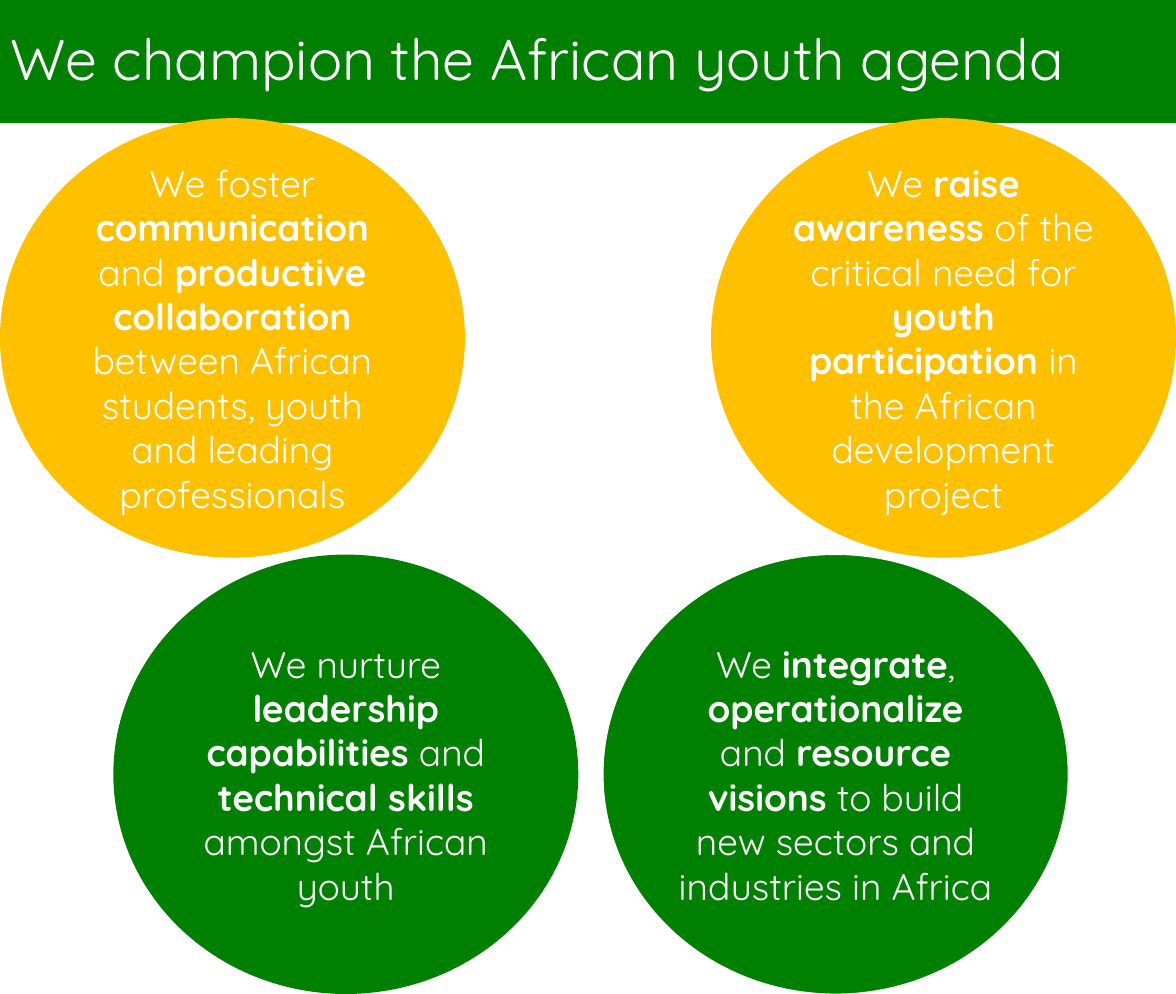
import pptx
import pptx.dml.color
import pptx.enum.shapes
import pptx.enum.text
import pptx.util

Inches, Pt = pptx.util.Inches, pptx.util.Pt
RGB = pptx.dml.color.RGBColor.from_string
SHAPE = pptx.enum.shapes.MSO_SHAPE
ALIGN = pptx.enum.text.PP_ALIGN
ANCHOR = pptx.enum.text.MSO_ANCHOR

TITLE = "We champion the African youth agenda"
# Asterisks enclose the bold words; each row holds fill, top, lefts and texts.
ROWS = [
    ("gold", 1.95, [
        (0, "We foster *communication* and *productive collaboration* between "
            "African students, youth and leading professionals"),
        (11.73, "We *raise awareness *of the critical need for *youth "
                "participation *in the African development project"),
    ]),
    ("green", 9.15, [
        (1.87, "We nurture *leadership capabilities* and *technical skills *"
               "amongst African youth"),
        (9.95, "We *integrate*, *operationalize* and *resource visions* to "
               "build new sectors and industries in Africa"),
    ]),
]
THEME = {"green": "008000", "gold": "FFC000", "text": "FFFFFF",
         "font": "Quicksand", "title_size": 68, "body_size": 44}
SLIDE_W, SLIDE_H = 19.4, 16.4
BANNER_H = 2.03
CIRCLE_W, CIRCLE_H = 7.67, 7.25


def add_panel(s, kind, box, fill, text, size, align):
    """Add a filled shape whose text is bold between asterisks."""
    sp = s.shapes.add_shape(kind, *map(Inches, box))
    sp.shadow.inherit = False
    sp.fill.solid()
    sp.fill.fore_color.rgb = RGB(THEME[fill])
    sp.line.fill.background()
    tf = sp.text_frame
    tf.word_wrap = True
    tf.vertical_anchor = ANCHOR.MIDDLE
    p = tf.paragraphs[0]
    p.alignment = align
    for i, part in enumerate(text.split("*")):
        r = p.add_run()
        r.text = part
        style = {"name": THEME["font"], "size": Pt(size), "bold": i % 2 == 1}
        for name, value in style.items():
            setattr(r.font, name, value)
        r.font.color.rgb = RGB(THEME["text"])
    return sp


prs = pptx.Presentation()
prs.slide_width, prs.slide_height = Inches(SLIDE_W), Inches(SLIDE_H)
s = prs.slides.add_slide(prs.slide_layouts[6])

banner = add_panel(s, SHAPE.RECTANGLE, (0, 0, SLIDE_W, BANNER_H), "green",
                   TITLE, THEME["title_size"], ALIGN.LEFT)
banner.text_frame.paragraphs[0].line_spacing = 0.9
for side, inset in {"left": 0.18, "right": 0.18, "top": 0.09, "bottom": 0.09}.items():
    setattr(banner.text_frame, f"margin_{side}", Inches(inset))

for fill, top, circles in ROWS:
    for left, text in circles:
        circle = add_panel(s, SHAPE.OVAL, (left, top, CIRCLE_W, CIRCLE_H), fill,
                           text, THEME["body_size"], ALIGN.CENTER)
# The last circle alone has an outline.
circle.line.color.rgb = RGB(THEME["text"])
circle.line.width = Pt(1)

prs.save("out.pptx")
